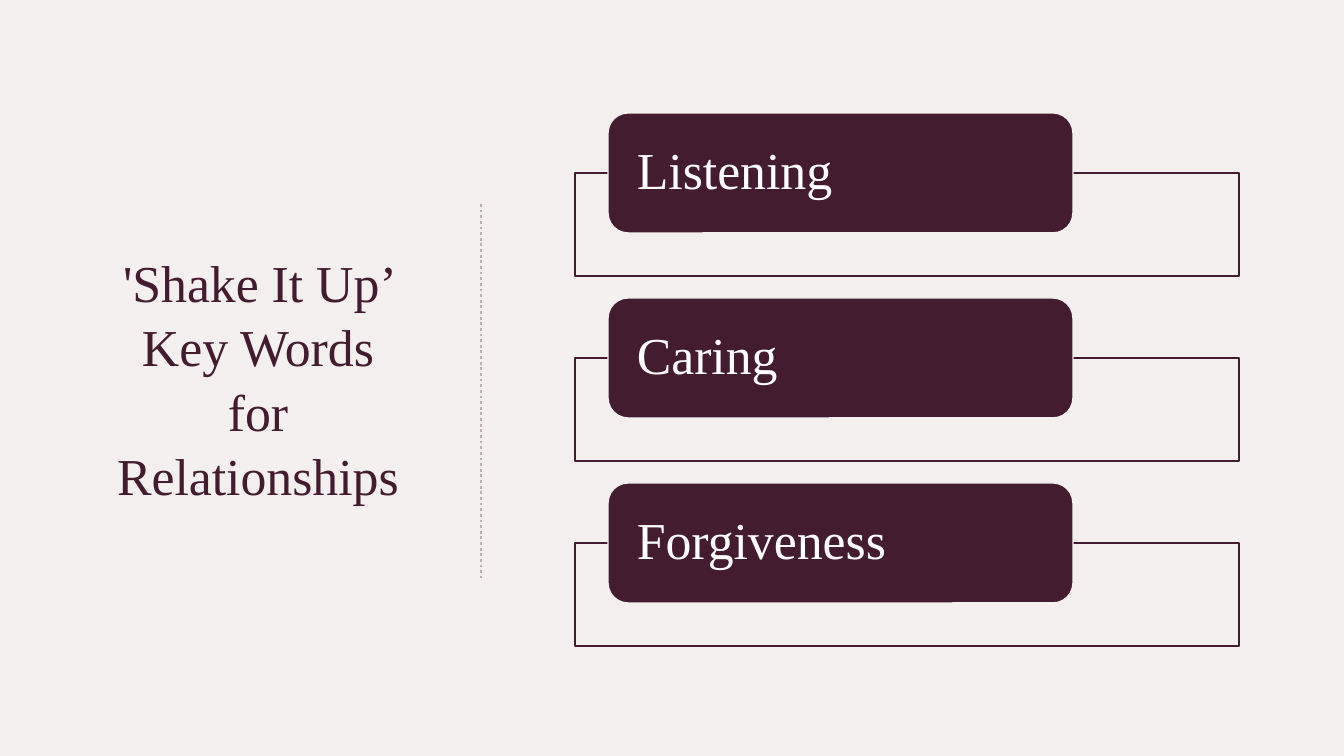
from lxml import etree
from pptx import Presentation
from pptx.dml.color import RGBColor
from pptx.enum.dml import MSO_LINE
from pptx.enum.shapes import MSO_CONNECTOR, MSO_SHAPE
from pptx.enum.text import MSO_ANCHOR, MSO_AUTO_SIZE, PP_ALIGN
from pptx.oxml.ns import qn
from pptx.util import Emu, Pt

EMU_PER_PX = 914400 / 100.8
RECTANGLE, ROUNDED = MSO_SHAPE.RECTANGLE, MSO_SHAPE.ROUNDED_RECTANGLE
STRAIGHT, DOTTED = MSO_CONNECTOR.STRAIGHT, MSO_LINE.ROUND_DOT
LEFT, CENTER, MIDDLE = PP_ALIGN.LEFT, PP_ALIGN.CENTER, MSO_ANCHOR.MIDDLE
NO_FIT = MSO_AUTO_SIZE.NONE

COLORS = {"paper": "F3F0EF", "plum": "431C30", "taupe": "BFAFAA", "white": "FFFFFF"}
FONT = {"name": "Times New Roman", "size": Pt(37), "bold": False}
WORDS = ["Listening", "Caring", "Forgiveness"]
ROW_PITCH = 185


def px(length):
    return Emu(round(length * EMU_PER_PX))


def color(name):
    return RGBColor.from_string(COLORS[name])


class Page:
    """One slide and the style its elements share."""

    def __init__(self, deck):
        self.slide = deck.slides.add_slide(deck.slide_layouts[5])
        self.shapes = self.slide.shapes
        fill = self.slide.background.fill
        fill.solid()
        fill.fore_color.rgb = color("paper")

    def set_text(self, shape, text, ink, align, spacing, inset):
        frame = shape.text_frame
        settings = {"word_wrap": True, "auto_size": NO_FIT, "vertical_anchor": MIDDLE,
                    "margin_left": px(inset), "margin_right": px(inset),
                    "margin_top": 0, "margin_bottom": 0}
        for key, value in settings.items():
            setattr(frame, key, value)
        para = frame.paragraphs[0]
        para.alignment, para.line_spacing = align, spacing
        span = para.add_run()
        span.text = text
        for key, value in FONT.items():
            setattr(span.font, key, value)
        span.font.color.rgb = color(ink)

    def title(self, text, *place):
        box = self.shapes.title
        for key, value in zip(("left", "top", "width", "height"), place):
            setattr(box, key, px(value))
        self.set_text(box, text, "plum", CENTER, 1.04, 10)

    def divider(self, x, top, bottom):
        line = self.shapes.add_connector(STRAIGHT, px(x), px(top), px(x), px(bottom))
        line.line.color.rgb = color("taupe")
        line.line.width, line.line.dash_style = Pt(2), DOTTED
        etree.SubElement(line._element.spPr, qn("a:effectLst"))

    def panel(self, kind, place, fill, outline):
        shape = self.shapes.add_shape(kind, *map(px, place))
        shape.shadow.inherit = False
        shape.fill.solid()
        shape.fill.fore_color.rgb = color(fill)
        shape.line.color.rgb = color(outline)
        shape.line.width = Pt(1)
        return shape

    def word_card(self, text, top):
        self.panel(RECTANGLE, (575, top + 60, 664, 103), "paper", "plum")
        label = self.panel(ROUNDED, (608, top, 465, 120), "plum", "paper")
        self.set_text(label, text, "white", LEFT, 0.9, 23)


def main():
    deck = Presentation()
    deck.slide_width, deck.slide_height = px(1344), px(756)
    page = Page(deck)

    # Title and dotted divider
    page.title("'Shake It Up’ Key Words for Relationships", 105, 174, 306, 406)
    page.divider(481, 204, 578)

    # Key words
    for row, word in enumerate(WORDS):
        page.word_card(word, 113 + row * ROW_PITCH)

    deck.save("out.pptx")


if __name__ == "__main__":
    main()
